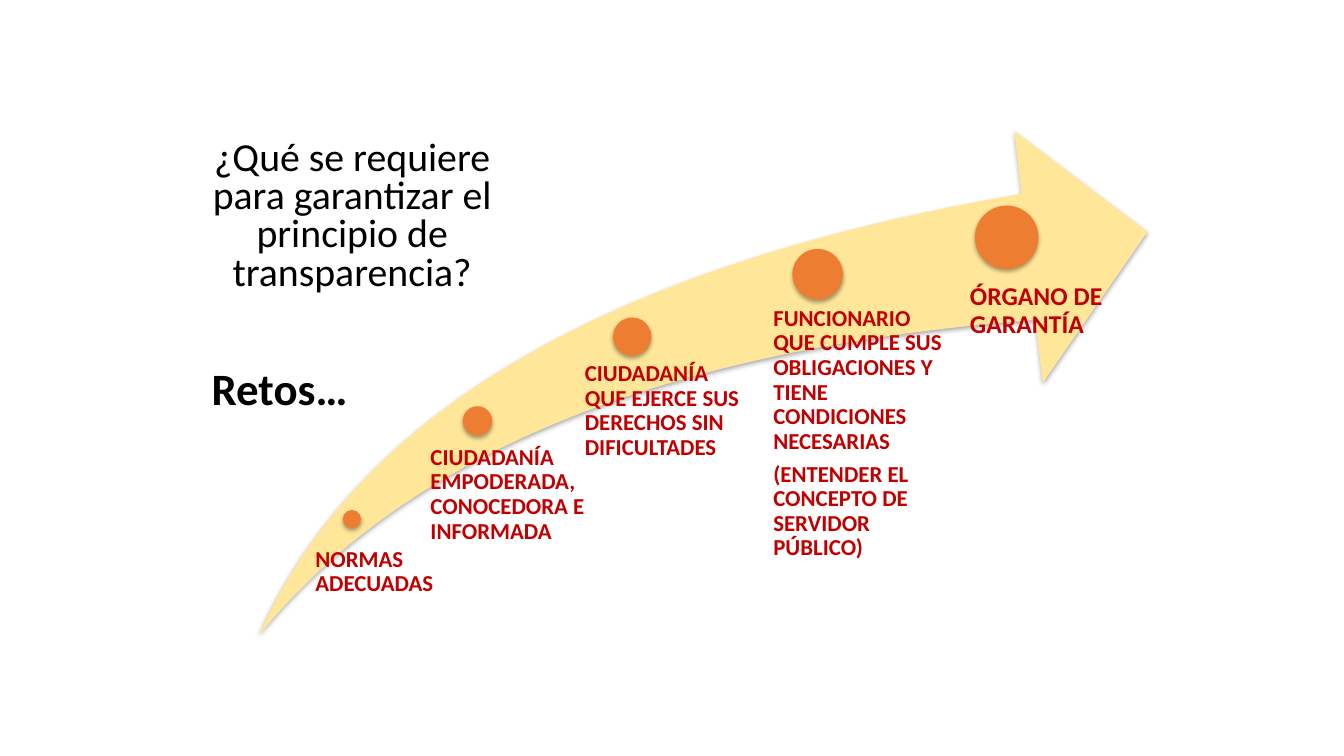
"""Build a slide with five milestones along a rising arrow."""
from dataclasses import dataclass

from lxml.etree import SubElement
from pptx import Presentation
from pptx.dml.color import RGBColor
from pptx.enum.shapes import MSO_SHAPE
from pptx.enum.text import MSO_AUTO_SIZE, PP_ALIGN
from pptx.oxml.ns import qn
from pptx.shapes.autoshape import Shape
from pptx.slide import Slide
from pptx.text.text import TextFrame
from pptx.util import Inches, Pt

COLORS = {"arrow": "FFE699", "dot": "ED7D31", "label": "C00000",
          "title": "000000", "shadow": "000000"}
FONT = "Calibri"


@dataclass
class Step:
    dot: tuple[float, float, float]
    box: tuple[float, float, float, float]
    inset: float
    lines: tuple[str, ...]
    size: float = 16.3


STEPS = [
    Step((3.4, 5.06, 0.18), (3.03, 5.43, 1.66, 0.8), 0.1, ("NORMAS ADECUADAS",)),
    Step((4.59, 4.03, 0.29), (4.12, 4.42, 2.06, 1.21), 0.15,
         ("CIUDADANÍA EMPODERADA, CONOCEDORA E INFORMADA",)),
    Step((6.08, 3.15, 0.38), (5.6, 3.59, 1.88, 0.93), 0.2,
         ("CIUDADANÍA QUE EJERCE SUS DERECHOS SIN DIFICULTADES",)),
    Step((7.86, 2.47, 0.5), (7.41, 3.04, 1.95, 3.05), 0.26,
         ("FUNCIONARIO QUE CUMPLE SUS OBLIGACIONES Y TIENE CONDICIONES NECESARIAS",
          "(ENTENDER EL CONCEPTO DE SERVIDOR PÚBLICO)")),
    Step((9.67, 2.04, 0.63), (9.29, 2.81, 2.02, 0.66), 0.33,
         ("ÓRGANO DE GARANTÍA",), 18.3),
]


def add_shade(shape: Shape) -> None:
    shape.shadow.inherit = False
    effects = shape.element.spPr.find(qn("a:effectLst"))
    outer = SubElement(effects, qn("a:outerShdw"), blurRad=str(Pt(3.1)),
                       dist=str(Pt(1.8)), dir="5400000", rotWithShape="0")
    color = SubElement(outer, qn("a:srgbClr"), val=COLORS["shadow"])
    SubElement(color, qn("a:alpha"), val="35000")


def add_form(slide: Slide, kind: MSO_SHAPE, box: tuple[float, ...], color: str) -> Shape:
    shape = slide.shapes.add_shape(kind, *map(Inches, box))
    shape.fill.solid()
    shape.fill.fore_color.rgb = RGBColor.from_string(COLORS[color])
    shape.line.fill.background()
    add_shade(shape)
    return shape


def add_text(slide: Slide, box: tuple[float, ...], lines: tuple[str, ...],
             size: float, color: str, bold: bool) -> TextFrame:
    frame = slide.shapes.add_textbox(*map(Inches, box)).text_frame
    frame.word_wrap = True
    frame.text = "\n".join(lines)
    for para in frame.paragraphs:
        para.font.name = FONT
        para.font.size = Pt(size)
        para.font.bold = bold
        para.font.color.rgb = RGBColor.from_string(COLORS[color])
    return frame


def add_label(slide: Slide, step: Step) -> None:
    frame = add_text(slide, step.box, step.lines, step.size, "label", True)
    frame.margin_left = Inches(step.inset)
    frame.margin_top = frame.margin_right = frame.margin_bottom = 0
    for para in frame.paragraphs:
        para.line_spacing = 0.9
        para.space_after = Pt(step.size * 0.35)


def add_heads(slide: Slide) -> None:
    title = add_text(slide, (1.96, 1.35, 3.07, 1.66),
                     ("¿Qué se requiere para garantizar el principio de transparencia?",),
                     28.4, "title", False)
    title.auto_size = MSO_AUTO_SIZE.SHAPE_TO_FIT_TEXT
    para = title.paragraphs[0]
    para.alignment = PP_ALIGN.CENTER
    para.line_spacing = 0.8
    para.space_before = para.space_after = Pt(4.9)
    topic = add_text(slide, (2, 3.53, 1.56, 0.64), ("Retos…",), 32, "title", True)
    topic.word_wrap = False
    topic.auto_size = MSO_AUTO_SIZE.SHAPE_TO_FIT_TEXT


def main() -> None:
    deck = Presentation()
    deck.slide_width, deck.slide_height = Inches(13.33), Inches(7.5)
    slide = deck.slides.add_slide(deck.slide_layouts[6])
    arrow = add_form(slide, MSO_SHAPE.SWOOSH_ARROW, (2.57, 1.3, 8.81, 5), "arrow")
    arrow.adjustments[0] = arrow.adjustments[1] = 0.25
    for step in STEPS:
        left, top, size = step.dot
        add_form(slide, MSO_SHAPE.OVAL, (left, top, size, size), "dot")
        add_label(slide, step)
    add_heads(slide)
    deck.save("out.pptx")


if __name__ == "__main__":
    main()
